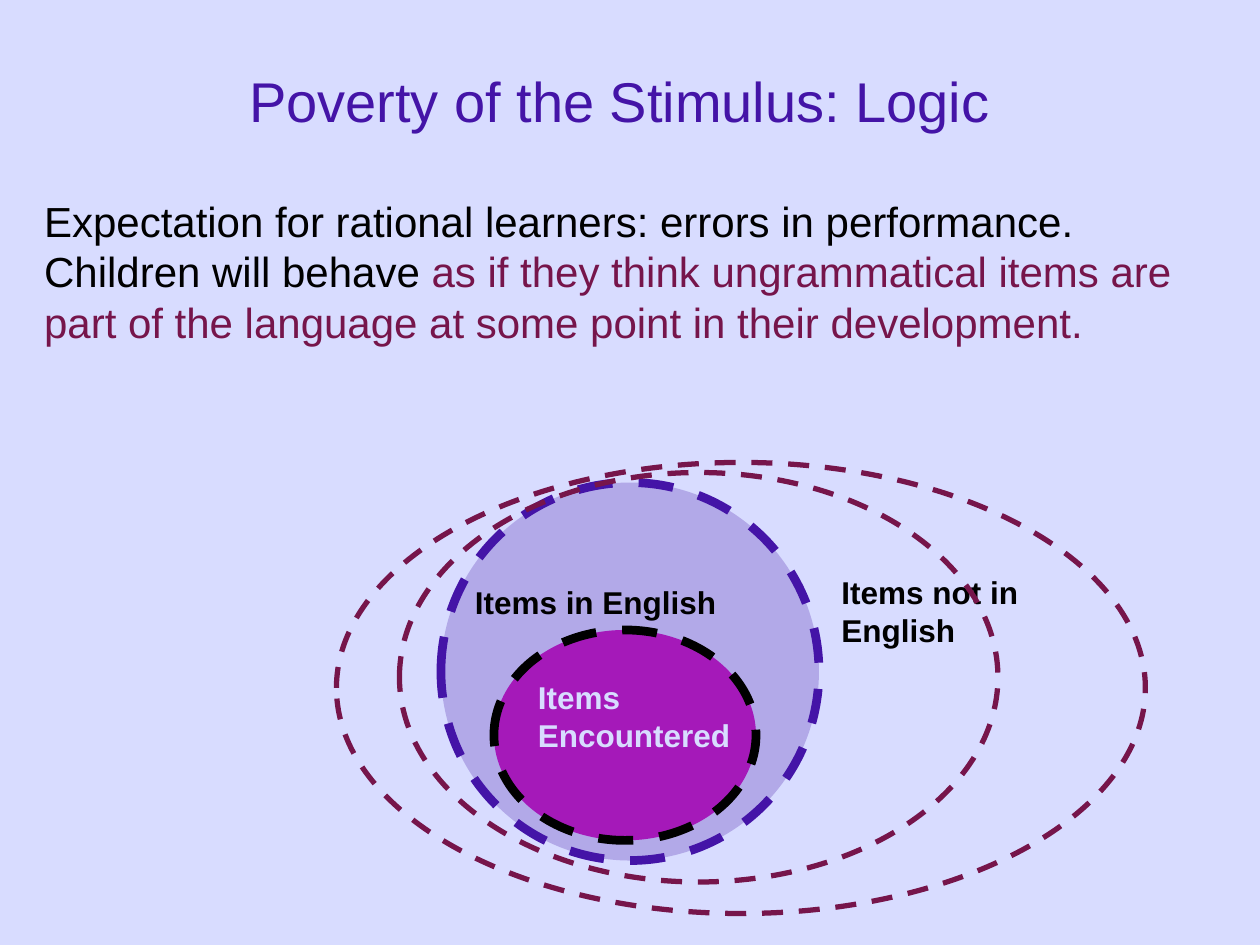
from lxml import etree
from pptx import Presentation
from pptx import util as u
from pptx.dml.color import RGBColor
from pptx.enum import dml, shapes, text
from pptx.oxml import ns

BACKGROUND = RGBColor(0xD8, 0xDC, 0xFF)
INDIGO = RGBColor(0x44, 0x14, 0xA7)
MAROON = RGBColor(0x76, 0x15, 0x4B)
PURPLE = RGBColor(0xA5, 0x19, 0xB9)
BLACK = RGBColor(0, 0, 0)

FONT = "Arial"
W, H = 10, 7.5


def place(sp, left, top, width, height):
    sp.left, sp.top = u.Inches(left), u.Inches(top)
    sp.width, sp.height = u.Inches(width), u.Inches(height)


def write(sp, *runs, size=18, bold=False, align=text.PP_ALIGN.LEFT,
          anchor=text.MSO_ANCHOR.TOP, wrap=True,
          fit=text.MSO_AUTO_SIZE.SHAPE_TO_FIT_TEXT):
    """Fill one paragraph with (words, colour) runs."""
    tf = sp.text_frame
    tf.word_wrap, tf.vertical_anchor, tf.auto_size = wrap, anchor, fit
    p = tf.paragraphs[0]
    p.alignment, p.space_before = align, u.Pt(0)
    for words, color in runs:
        r = p.add_run()
        r.text = words
        r.font.name, r.font.size, r.font.bold = FONT, u.Pt(size), bold
        r.font.color.rgb = color
    return p


def remove_bullet(p):
    pPr = p._p.get_or_add_pPr()
    pPr.set("marL", "0")
    pPr.set("indent", "0")
    etree.SubElement(pPr, ns.qn("a:buNone"))


def add_label(slide, words, box, color=BLACK, wrap=True):
    sp = slide.shapes.add_textbox(*map(u.Inches, box))
    write(sp, (words, color), bold=True, wrap=wrap)


def add_set(slide, box, line, weight, fill=None, opacity=100):
    """Draw a dashed ellipse that stands for a set of items."""
    sp = slide.shapes.add_shape(shapes.MSO_SHAPE.OVAL, *map(u.Inches, box))
    sp.shadow.inherit = False
    sp.line.color.rgb, sp.line.width = line, u.Pt(weight)
    sp.line.dash_style = dml.MSO_LINE.DASH
    if fill is None:
        sp.fill.background()
        return
    sp.fill.solid()
    sp.fill.fore_color.rgb = fill
    if opacity < 100:
        clr = sp._element.spPr.find(ns.qn("a:solidFill"))[0]
        etree.SubElement(clr, ns.qn("a:alpha")).set("val", str(opacity * 1000))


def main():
    prs = Presentation()
    prs.slide_width, prs.slide_height = u.Inches(W), u.Inches(H)
    slide = prs.slides.add_slide(prs.slide_layouts[1])
    slide.background.fill.solid()
    slide.background.fill.fore_color.rgb = BACKGROUND

    # Title and statement
    title, body = slide.placeholders
    place(title, 0.67, 0.17, 8.5, 1.25)
    write(title, ("Poverty of the Stimulus: Logic", INDIGO), size=32,
          align=text.PP_ALIGN.CENTER, anchor=text.MSO_ANCHOR.MIDDLE,
          fit=text.MSO_AUTO_SIZE.NONE)
    place(body, 0.25, 1.5, 9.42, 1.3)
    p = write(body,
              ("Expectation for rational learners: errors in performance. "
               "Children will behave ", BLACK),
              ("as if they think ungrammatical items are part of the language "
               "at some point in their development.", MAROON), size=24)
    remove_bullet(p)

    # Nested sets and their labels, from back to front
    add_set(slide, (2.67, 3.67, 6.42, 3.58), MAROON, 3)
    add_set(slide, (3.5, 3.83, 3, 3), INDIGO, 5, fill=INDIGO, opacity=25)
    add_set(slide, (3.92, 5, 2.08, 1.67), BLACK, 5, fill=PURPLE)
    add_label(slide, "Items Encountered", (4.17, 5.33, 1.75, 0.7), BACKGROUND)
    add_label(slide, "Items in English", (3.67, 4.58, 2.12, 0.4), wrap=False)
    add_label(slide, "Items not in English", (6.58, 4.5, 1.75, 0.7))
    add_set(slide, (3.17, 3.75, 4.75, 3.25), MAROON, 3)

    prs.save("out.pptx")


if __name__ == "__main__":
    main()
